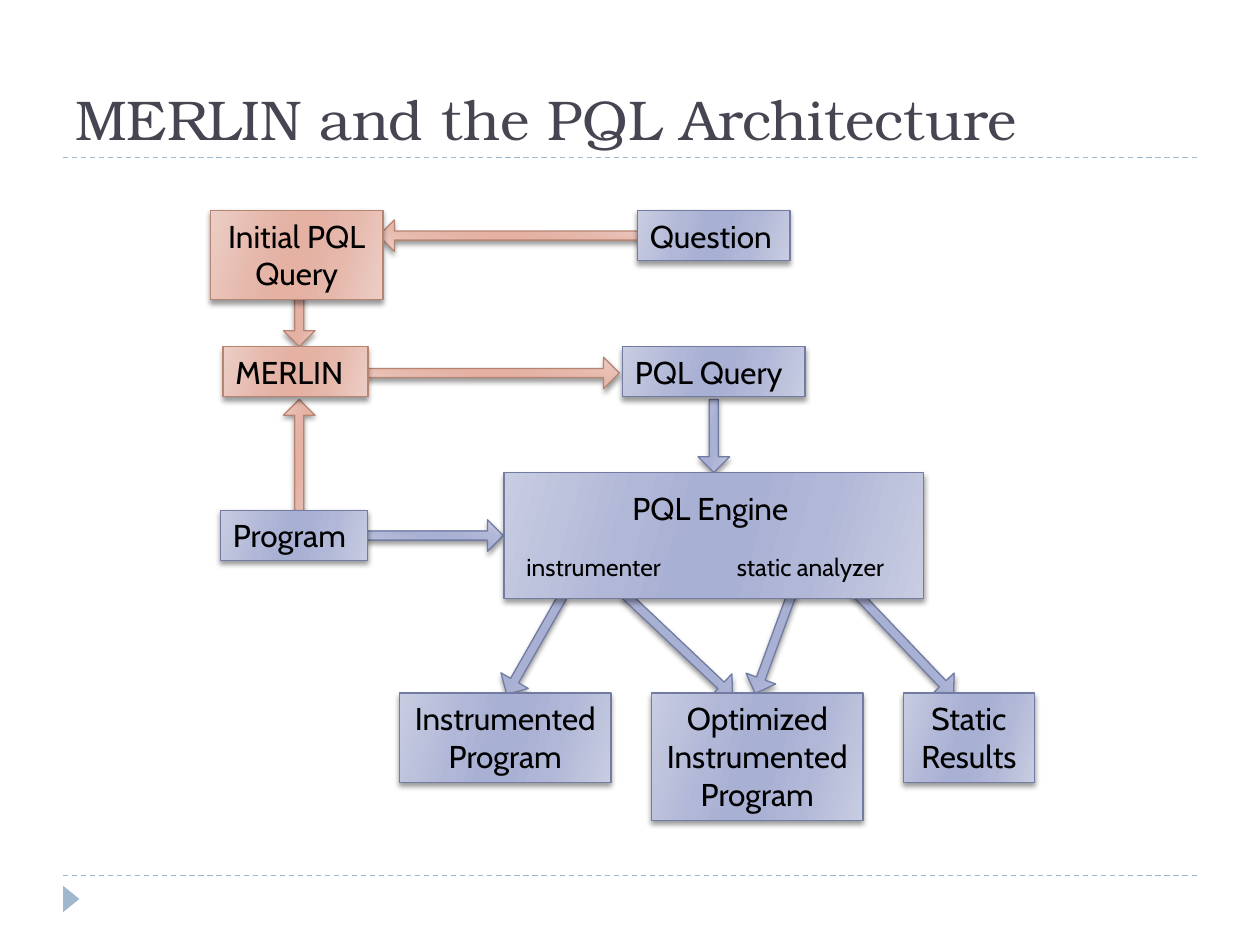
import pptx
import pptx.dml.color
import pptx.enum.dml
import pptx.enum.shapes
import pptx.enum.text
import pptx.oxml
import pptx.oxml.ns
import pptx.util

Inches = pptx.util.Inches
Pt = pptx.util.Pt
qn = pptx.oxml.ns.qn
hue = pptx.dml.color.RGBColor.from_string
Kind = pptx.enum.shapes.MSO_SHAPE
Anchor = pptx.enum.text.MSO_ANCHOR
Align = pptx.enum.text.PP_ALIGN

NS = pptx.oxml.ns.nsdecls("a")
STOPS = [0, 30, 45, 55, 73, 100]
PINK = {"line": "B88472", "fill": ["ECCEC6", "E6B8AC", "E4B1A3"]}
BLUE = {"line": "727CA3", "fill": ["C9CDE2", "B1B7D7", "A8B0D3"]}
MIST = "9FB8CD"
BODY = {"name": "Cabin", "size": Pt(18)}
SMALL = {"name": "Cabin", "size": Pt(14)}
HEAD = {"name": "TeX Gyre Bonum", "size": Pt(32)}


def shade(shape, tone):
    """Give a shape the mirrored gradient, thin outline and soft shadow of a tone."""
    shape.fill.gradient()
    shape.fill.gradient_angle = 344
    stops = shape.element.spPr.find(qn("a:gradFill")).find(qn("a:gsLst"))
    stops.clear()
    for pos, color in zip(STOPS, tone["fill"] + tone["fill"][::-1]):
        stops.append(pptx.oxml.parse_xml(
            f'<a:gs {NS} pos="{pos * 1000}"><a:srgbClr val="{color}"/></a:gs>'))
    shape.line.color.rgb = hue(tone["line"])
    shape.line.width = Pt(0.75)
    shape.shadow.inherit = False
    shape.element.spPr.find(qn("a:effectLst")).append(pptx.oxml.parse_xml(
        f'<a:outerShdw {NS} blurRad="{Pt(3)}" dist="{Pt(2)}" dir="5400000" rotWithShape="0">'
        '<a:srgbClr val="000000"><a:alpha val="40000"/></a:srgbClr></a:outerShdw>'))


def write(shape, text, font, color="000000", anchor=Anchor.TOP, wrap=False):
    """Put each line of text in its own paragraph; several lines are centred."""
    frame = shape.text_frame
    frame.word_wrap = wrap
    frame.vertical_anchor = anchor
    frame.text = text
    for para in frame.paragraphs:
        para.alignment = Align.CENTER if "\n" in text else Align.LEFT
        for name, value in font.items():
            setattr(para.font, name, value)
        para.font.color.rgb = hue(color)


deck = pptx.Presentation()
deck.slide_width = Inches(10)
deck.slide_height = Inches(7.5)
slide = deck.slides.add_slide(deck.slide_layouts[6])
shapes = slide.shapes

# Page frame
for y in (6.95, 1.25):
    rule = shapes.add_connector(pptx.enum.shapes.MSO_CONNECTOR.STRAIGHT,
                                Inches(0.5), Inches(y), Inches(9.5), Inches(y))
    rule.line.color.rgb = hue(MIST)
    rule.line.width = Pt(0.75)
    rule.line.dash_style = pptx.enum.dml.MSO_LINE.DASH
    rule.element.spPr.append(pptx.oxml.parse_xml(f"<a:effectLst {NS}/>"))

mark = shapes.add_shape(Kind.ISOSCELES_TRIANGLE, Inches(0.46), Inches(7.07),
                        Inches(0.21), Inches(0.13))
mark.rotation = 90
mark.fill.solid()
mark.fill.fore_color.rgb = hue(MIST)
mark.line.fill.background()
mark.shadow.inherit = False

title = shapes.add_textbox(Inches(0.5), Inches(0.17), Inches(9), Inches(1.08))
write(title, "MERLIN and the PQL Architecture", HEAD, "464653", Anchor.BOTTOM, True)

# Arrows: left, top, length, turn, tone
arrows = [
    (3.79, 1.96, 2, 270, PINK),
    (2.25, 3.17, 0.92, 180, PINK),
    (2.25, 2.33, 0.42, 0, PINK),
    (3.92, 0.83, 2.08, 90, PINK),
    (5.54, 3.17, 0.58, 0, BLUE),
    (3.33, 3.71, 1.08, 270, BLUE),
    (4.12, 4.67, 0.9, 29.7, BLUE),
    (7.04, 4.51, 1.17, 316.4, BLUE),
    (5.26, 4.53, 1.18, 313.4, BLUE),
    (6.02, 4.66, 0.87, 20.2, BLUE),
]
for left, top, length, turn, tone in arrows:
    arrow = shapes.add_shape(Kind.DOWN_ARROW, Inches(left), Inches(top),
                             Inches(0.25), Inches(length))
    arrow.adjustments[0] = 0.29
    arrow.adjustments[1] = 0.5
    arrow.rotation = turn
    shade(arrow, tone)

# Boxes: text, left, top, width, height, tone
boxes = [
    ("Question", 5.06, 1.67, 1.21, 0.4, BLUE),
    ("PQL Query", 4.94, 2.75, 1.45, 0.4, BLUE),
    ("Program", 1.75, 4.05, 1.17, 0.4, BLUE),
    ("", 4, 3.75, 3.33, 1, BLUE),
    ("Instrumented\nProgram", 3.17, 5.5, 1.68, 0.71, BLUE),
    ("Optimized\nInstrumented\nProgram", 5.17, 5.5, 1.68, 1.01, BLUE),
    ("Static\nResults", 7.17, 5.5, 1.04, 0.71, BLUE),
    ("MERLIN", 1.77, 2.75, 1.15, 0.4, PINK),
    ("Initial PQL\nQuery", 1.67, 1.67, 1.37, 0.71, PINK),
]
for text, left, top, width, height, tone in boxes:
    box = shapes.add_shape(Kind.RECTANGLE, Inches(left), Inches(top),
                           Inches(width), Inches(height))
    shade(box, tone)
    if text:
        write(box, text, BODY)

# Labels inside the engine box
labels = [
    ("instrumenter", 4.08, 4.33, 1.29, 0.34, SMALL),
    ("static analyzer", 5.75, 4.33, 1.5, 0.34, SMALL),
    ("PQL Engine", 4.92, 3.83, 1.55, 0.4, BODY),
]
for text, left, top, width, height, font in labels:
    label = shapes.add_textbox(Inches(left), Inches(top), Inches(width), Inches(height))
    write(label, text, font)

deck.save("out.pptx")
